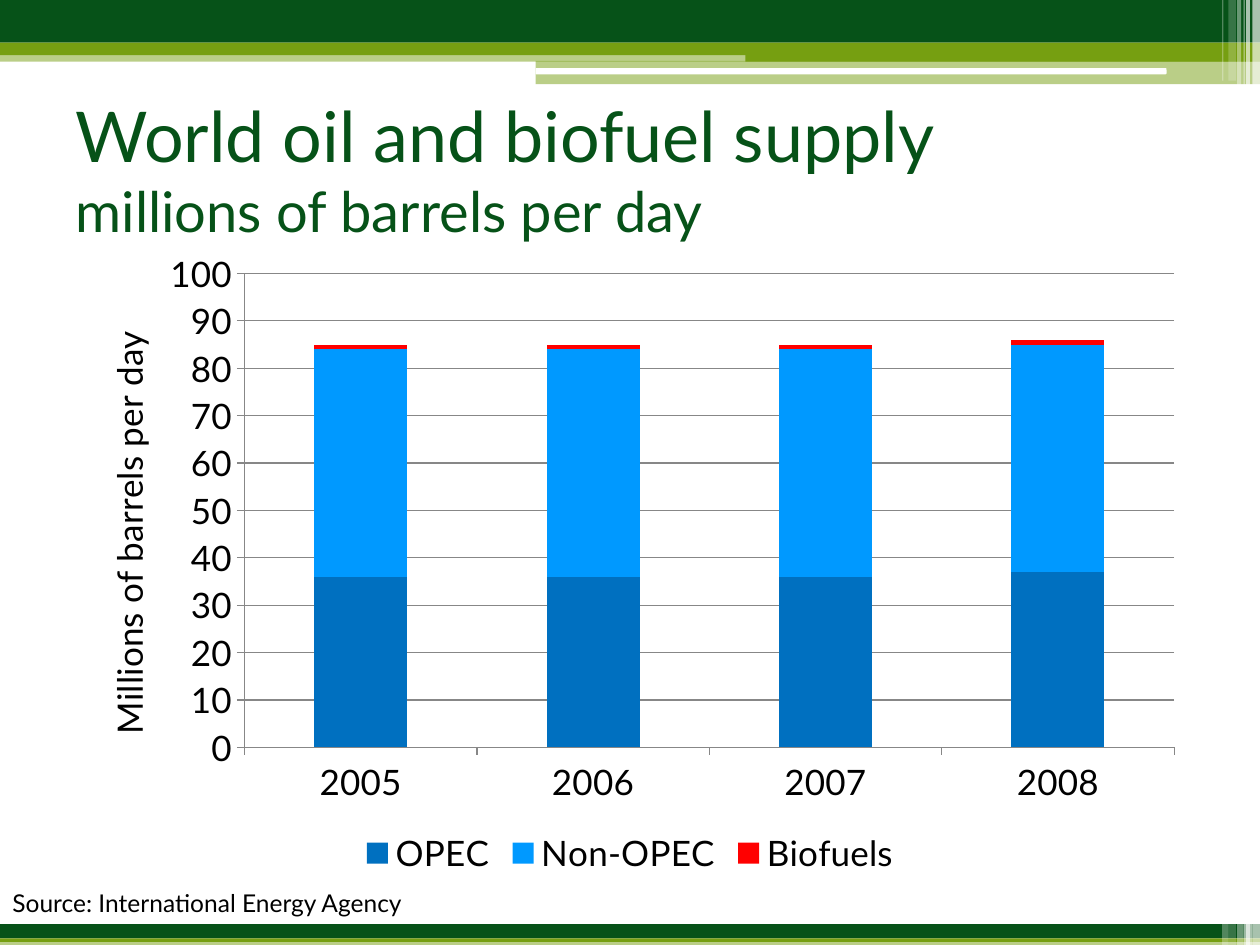
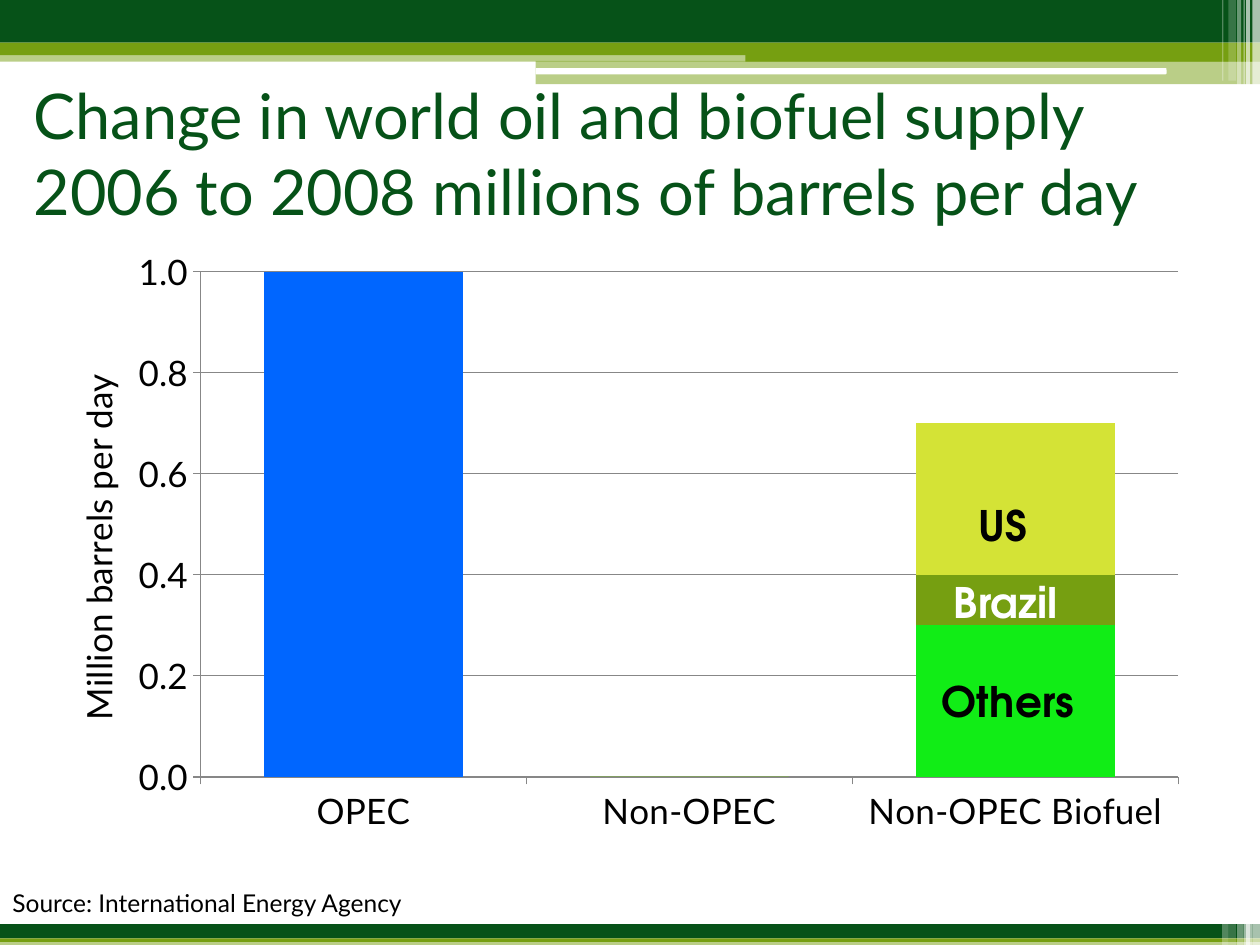
import pptx
import pptx.chart.data
import pptx.dml.color
import pptx.enum.chart
import pptx.enum.shapes
import pptx.enum.text
import pptx.oxml
import pptx.oxml.ns
import pptx.util
from collections import namedtuple

Pt = pptx.util.Pt
Box = namedtuple("Box", "left top width height")
PAGE = Box(0, 0, 720, 540)
DARK, OLIVE, WHITE, BLACK, GRID = "065218", "769F11", "FFFFFF", "000000", "878787"
BODY_FONT, LABEL_FONT = "Lato", "TeX Gyre Adventor"
STRIPE_LEFTS = (715.7, 712.1, 710.6, 707, 702, 698.4)
STRIPE_ALPHAS = (65, 65, 60, 40, 20, 30)
HEADER_WIDTHS = (4.3, 2.2, 0.7, 2.2, 4.3, 0.7)
FOOTER_WIDTHS = (4.3, 3.6, 3.6, 3.6, 4.3, 3.6)


def color(code):
    return pptx.dml.color.RGBColor.from_string(code)


def assign(target, values):
    for name, value in values.items():
        setattr(target, name, value)


def style_font(font, size, code=BLACK, name=BODY_FONT, bold=False):
    assign(font, {"size": Pt(size), "name": name, "bold": bold})
    font.color.rgb = color(code)


def place(box):
    return [Pt(length) for length in box]


def inside(box, left, top, width, height):
    return Box(box.left + left, box.top + top, width, height)


def add_band(page, box, code, alpha=100, kind="RECTANGLE"):
    band = page.shapes.add_shape(pptx.enum.shapes.MSO_SHAPE[kind], *place(box))
    band.shadow.inherit = False
    band.fill.solid()
    band.fill.fore_color.rgb = color(code)
    band.line.fill.background()
    if alpha < 100:
        tone = band.element.xpath("./p:spPr/a:solidFill/a:srgbClr")[0]
        tone.append(pptx.oxml.parse_xml(
            f'<a:alpha {pptx.oxml.ns.nsdecls("a")} val="{alpha * 1000}"/>'))
    return band


def add_stripes(page, box, widths, heights):
    return [
        add_band(page, inside(box, left, 0, width, height), WHITE, alpha)
        for left, width, height, alpha in zip(STRIPE_LEFTS, widths, heights, STRIPE_ALPHAS)
    ]


def add_header(page, box):
    bands = [
        add_band(page, inside(box, *part), code, alpha)
        for part, code, alpha in (
            ((0, 28.5, 720, 6.8), OLIVE, 50),
            ((0, 0, 720, 24.4), DARK, 100),
            ((0, 24.4, 720, 7.2), OLIVE, 100),
            ((426, 28, 294, 7.2), OLIVE, 100),
            ((306, 34.8, 414, 13.3), OLIVE, 50),
        )
    ]
    bands.append(add_band(page, inside(box, 306, 38.9, 360.6, 3.6), WHITE, kind="ROUNDED_RECTANGLE"))
    return bands + add_stripes(page, box, HEADER_WIDTHS, [48.9] * 4 + [46.1] * 2)


def add_footer(page, box):
    bands = [
        add_band(page, inside(box, 0, top, box.width, height), code, alpha)
        for top, height, code, alpha in (
            (10, 2, OLIVE, 50), (0, 8.2, DARK, 100), (8.2, 2, OLIVE, 100))
    ]
    return bands + add_stripes(page, box, FOOTER_WIDTHS, [box.height] * 6)


def share_bands(page):
    bands = add_header(page, Box(0, 0, 720, 49)) + add_footer(page, Box(0, 528, 720, 12))
    for number, band in enumerate(bands, 100):
        band.element.xpath("./p:nvSpPr/p:cNvPr")[0].set("id", str(number))
        page.slide_layout.shapes.element.append(band.element)


def set_title(page, box, lines):
    title = page.shapes.title
    assign(title, dict(zip(box._fields, place(box))))
    frame = title.text_frame
    assign(frame, {
        "word_wrap": True,
        "auto_size": pptx.enum.text.MSO_AUTO_SIZE.NONE,
        "vertical_anchor": pptx.enum.text.MSO_ANCHOR.MIDDLE,
    })
    para = frame.paragraphs[0]
    para.alignment = pptx.enum.text.PP_ALIGN.LEFT
    for number, (text, size) in enumerate(lines):
        if number:
            para.add_line_break()
        span = para.add_run()
        span.text = text
        style_font(span.font, size, DARK)


def add_label(page, box, text, size, **look):
    frame = page.shapes.add_textbox(*place(box)).text_frame
    assign(frame, {"word_wrap": False, "auto_size": pptx.enum.text.MSO_AUTO_SIZE.SHAPE_TO_FIT_TEXT})
    span = frame.paragraphs[0].add_run()
    span.text = text
    style_font(span.font, size, **look)


def set_layout(parent, index, target, **fractions):
    for old in parent.xpath("./c:layout"):
        parent.remove(old)
    modes = "".join(f'<c:{name}Mode val="edge"/>' for name in ("x", "y"))
    values = "".join(f'<c:{name} val="{value}"/>' for name, value in fractions.items())
    parent.insert(index, pptx.oxml.parse_xml(
        f'<c:layout {pptx.oxml.ns.nsdecls("c")}><c:manualLayout>'
        f"{target}{modes}{values}</c:manualLayout></c:layout>"))


def style_axis(axis):
    style_font(axis.tick_labels.font, 20)
    axis.format.line.color.rgb = color(GRID)


def add_stacked_chart(page, box, categories, series, axis_title, title_spot, plot, scale, gap, number_format):
    data = pptx.chart.data.CategoryChartData()
    data.categories = categories
    for name, values, _ in series:
        data.add_series(name, values)
    kind = pptx.enum.chart.XL_CHART_TYPE.COLUMN_STACKED
    chart = page.shapes.add_chart(kind, *place(box), data).chart
    assign(chart, {"has_title": False, "has_legend": False})
    style_font(chart.font, 10, name="TeX Gyre Schola")
    bars = chart.plots[0]
    assign(bars, {"gap_width": gap, "overlap": 100, "vary_by_categories": False})
    for bar, (_, _, code) in zip(bars.series, series):
        bar.format.fill.solid()
        bar.format.fill.fore_color.rgb = color(code)

    axis = chart.value_axis
    for each in (chart.category_axis, axis):
        style_axis(each)
    assign(axis, dict(scale, minimum_scale=0, has_major_gridlines=True))
    axis.major_gridlines.format.line.color.rgb = color(GRID)
    assign(axis.tick_labels, {"number_format": number_format, "number_format_is_linked": False})
    span = axis.axis_title.text_frame.paragraphs[0].add_run()
    span.text = axis_title
    style_font(span.font, 20)
    title = axis.axis_title.element
    body = title.xpath(".//a:bodyPr")[0]
    for name, value in {"rot": "-5400000", "vert": "horz"}.items():
        body.set(name, value)
    set_layout(title, 1, "", **dict(zip("xy", title_spot)))
    area = chart.element.xpath("./c:chart/c:plotArea")[0]
    set_layout(area, 0, '<c:layoutTarget val="inner"/>', **dict(zip("xywh", plot)))
    return chart


def add_legend(chart):
    chart.has_legend = True
    assign(chart.legend, {
        "position": pptx.enum.chart.XL_LEGEND_POSITION.BOTTOM,
        "include_in_layout": False,
    })
    style_font(chart.legend.font, 20)


def add_page(deck, title_box, title_lines):
    page = deck.slides.add_slide(deck.slide_layouts[5])
    set_title(page, title_box, title_lines)
    add_label(page, Box(0, 504, 247.7, 24.5), "Source: International Energy Agency", 14)
    return page


def build_supply(deck):
    page = add_page(deck, Box(36, 54, 648, 84), (
        ("World oil and biofuel supply", 40), ("millions of barrels per day", 32)))
    chart = add_stacked_chart(
        page, Box(36, 138, 648, 366), ("2005", "2006", "2007", "2008"),
        (("OPEC", (36, 36, 36, 37), "0070C0"),
         ("Non-OPEC", (48, 48, 48, 48), "0099FF"),
         ("Biofuels", (1, 1, 1, 1), "FF0000")),
        "Millions of barrels per day", (0.03, 0.13), (0.16, 0.05, 0.82, 0.74),
        {"maximum_scale": 100, "major_unit": 10}, 150, "General")
    add_legend(chart)
    return page


def build_change(deck):
    page = add_page(deck, Box(12, 42, 696, 90), (
        ("Change in world oil and biofuel supply", 36),
        ("2006 to 2008 millions of barrels per day", 36)))
    chart = add_stacked_chart(
        page, Box(18, 138, 666, 360), ("OPEC", "Non-OPEC", "Non-OPEC Biofuel"),
        (("Series 1", (1, 0, 0.3), "11ED16"),
         ("Series 2", (0, 0, 0.1), OLIVE),
         ("Series 3", (0, 0, 0.3), "D4E336")),
        "Million barrels per day", (0.03, 0.2), (0.145, 0.048, 0.839, 0.802),
        {"maximum_scale": 1, "major_unit": 0.2}, 64, "#,##0.0")
    opec = chart.plots[0].series[0].points[0].format.fill
    opec.solid()
    opec.fore_color.rgb = color("0066FF")
    for text, left, top, width, code in (
        ("US", 552, 282, 48, BLACK),
        ("Brazil", 538, 326, 80.6, WHITE),
        ("Others", 531, 382.3, 93, BLACK),
    ):
        add_label(page, Box(left, top, width, 36.5), text, 24, code=code, name=LABEL_FONT, bold=True)


def main():
    deck = pptx.Presentation()
    assign(deck, {"slide_width": Pt(PAGE.width), "slide_height": Pt(PAGE.height)})
    share_bands(build_supply(deck))
    build_change(deck)
    deck.save("out.pptx")


if __name__ == "__main__":
    main()
